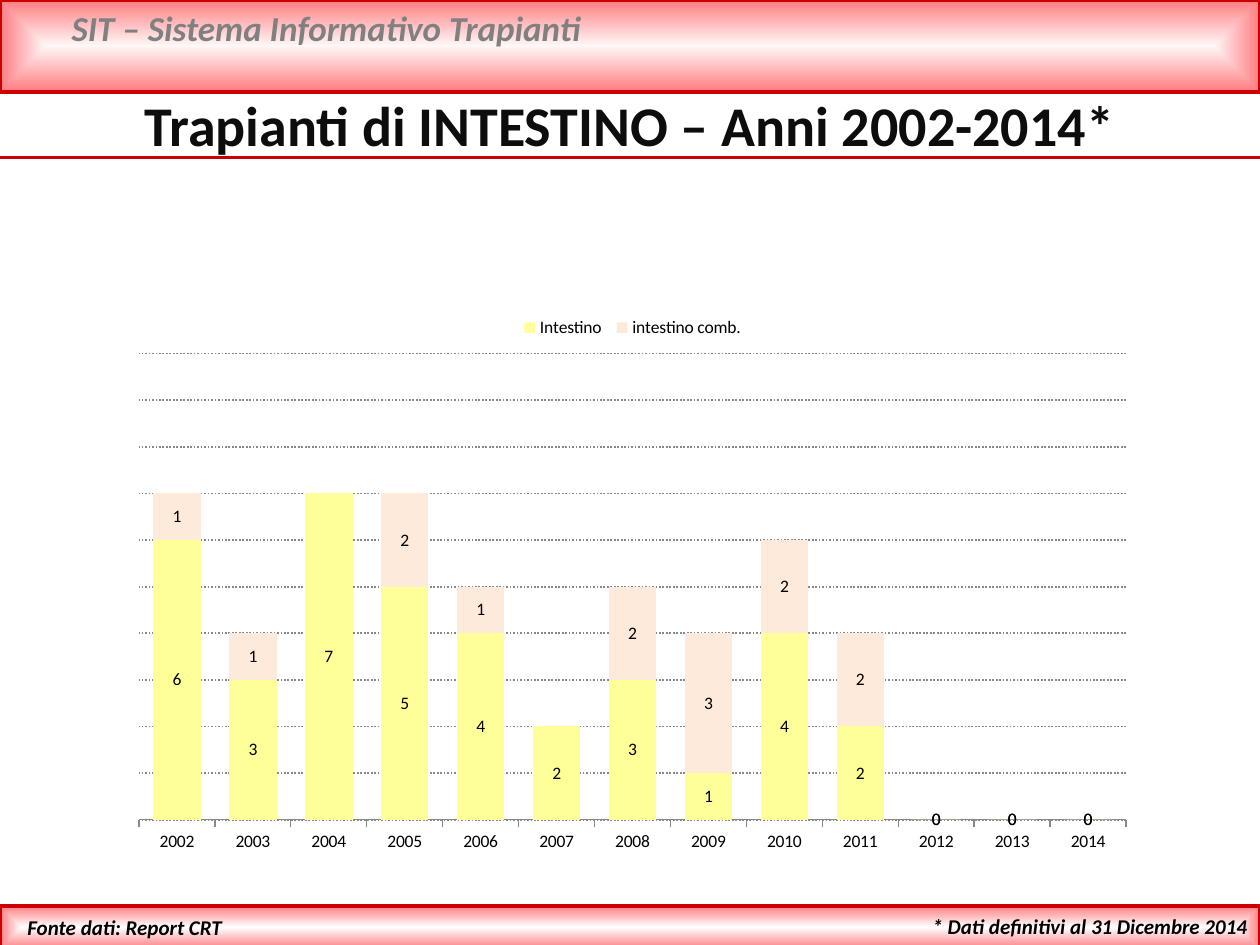
from lxml import etree
from pptx import Presentation
from pptx.chart.data import CategoryChartData
from pptx.dml.color import RGBColor
from pptx.enum.chart import XL_CHART_TYPE, XL_LEGEND_POSITION, XL_TICK_LABEL_POSITION, XL_TICK_MARK
from pptx.enum.dml import MSO_LINE
from pptx.enum.shapes import MSO_CONNECTOR, MSO_SHAPE
from pptx.enum.text import MSO_ANCHOR, PP_ALIGN
from pptx.oxml import parse_xml
from pptx.oxml.ns import nsdecls, qn
from pptx.util import Pt

STACKED = XL_CHART_TYPE.COLUMN_STACKED
LEGEND_TOP = XL_LEGEND_POSITION.TOP
LABELS_LOW = XL_TICK_LABEL_POSITION.LOW
TICK_OUT, TICK_NONE = XL_TICK_MARK.OUTSIDE, XL_TICK_MARK.NONE
DOTTED = MSO_LINE.ROUND_DOT
STRAIGHT = MSO_CONNECTOR.STRAIGHT
RECTANGLE = MSO_SHAPE.RECTANGLE
TOP = MSO_ANCHOR.TOP
LEFT, CENTER, RIGHT = PP_ALIGN.LEFT, PP_ALIGN.CENTER, PP_ALIGN.RIGHT
FONT = "Calibri"
RED = "CC0000"
WIDTH = 720


def color(value):
    return RGBColor.from_string(value)


def write(shape, text, size, font_color, alignment, italic):
    frame = shape.text_frame
    frame.word_wrap = True
    frame.vertical_anchor = TOP
    frame.text = text
    paragraph = frame.paragraphs[0]
    paragraph.alignment = alignment
    font = paragraph.font
    font.name, font.size = FONT, Pt(size)
    font.bold, font.italic = True, italic
    font.color.rgb = color(font_color)


presentation = Presentation()
presentation.slide_width, presentation.slide_height = Pt(WIDTH), Pt(540)
slide = presentation.slides.add_slide(presentation.slide_layouts[5])
shapes = slide.shapes

# Header and footer bands, shaded from a light centre to red edges
for top, height, center_color in [(0, 52.5, "FFF6F6"), (517.7, 24.5, "FFFFFF")]:
    band = shapes.add_shape(RECTANGLE, 0, Pt(top), Pt(WIDTH), Pt(height))
    band.shadow.inherit = False
    band.line.color.rgb = color(RED)
    band.line.width = Pt(2)
    gradient = parse_xml(
        f'<a:gradFill {nsdecls("a")} rotWithShape="1"><a:gsLst>'
        f'<a:gs pos="0"><a:srgbClr val="{center_color}"/></a:gs>'
        '<a:gs pos="100000"><a:srgbClr val="FF7C80"/></a:gs></a:gsLst>'
        '<a:path path="shape"><a:fillToRect l="50000" t="50000" r="50000" b="50000"/>'
        '</a:path></a:gradFill>')
    band.element.spPr.find(qn("a:prstGeom")).addnext(gradient)

# Rule under the title
rule = shapes.add_connector(STRAIGHT, 0, Pt(90), Pt(WIDTH), Pt(90))
rule.line.color.rgb = color(RED)
rule.line.width = Pt(2)
etree.SubElement(rule.element.spPr, qn("a:effectLst"))

# Header and footer texts
band_texts = [
    ("SIT – Sistema Informativo Trapianti", 33.8, 0, 646.6, 31.7, 20, "808080", LEFT),
    ("* Dati definitivi al 31 Dicembre 2014", 422.6, 518.4, 297.4, 21.6, 12, "000000", RIGHT),
    ("Fonte dati: Report CRT", 8.6, 519.1, 231.1, 21.6, 12, "000000", LEFT),
]
for text, left, top, width, height, size, font_color, alignment in band_texts:
    box = shapes.add_textbox(Pt(left), Pt(top), Pt(width), Pt(height))
    write(box, text, size, font_color, alignment, True)

# Title
title = shapes.title
title.left, title.top, title.width, title.height = 0, Pt(48.2), Pt(WIDTH), Pt(46)
write(title, "Trapianti di INTESTINO – Anni 2002-2014*", 32, "0D0D0D", CENTER, False)

# Transplants per year
data = CategoryChartData()
data.categories = [str(year) for year in range(2002, 2015)]
data.add_series("Intestino ", [6, 3, 7, 5, 4, 2, 3, 1, 4, 2, 0, 0, 0])
data.add_series("intestino comb.", [1, 1, None, 2, 1, None, 2, 3, 2, 2, 0, 0, 0])
chart = shapes.add_chart(STACKED, Pt(67.7), Pt(173.5), Pt(587.5), Pt(319.7), data).chart
chart.has_title = False
chart.font.name, chart.font.size = FONT, Pt(10)
chart.font.color.rgb = color("000000")
chart.has_legend = True
chart.legend.position = LEGEND_TOP
chart.legend.include_in_layout = False

plot = chart.plots[0]
plot.gap_width, plot.overlap = 60, 100
plot.vary_by_categories = False
for series, fill_color in zip(plot.series, ["FFFF99", "FDEADA"]):
    series.format.fill.solid()
    series.format.fill.fore_color.rgb = color(fill_color)
    series.data_labels.show_value = True

# Axes
category_axis = chart.category_axis
category_axis.major_tick_mark = TICK_OUT
category_axis.minor_tick_mark = TICK_NONE
category_axis.tick_label_position = LABELS_LOW
category_axis.format.line.color.rgb = color("888888")
value_axis = chart.value_axis
value_axis.visible = False
value_axis.minimum_scale, value_axis.maximum_scale = 0, 10
value_axis.major_unit = 1
value_axis.has_major_gridlines = True
gridline = value_axis.major_gridlines.format.line
gridline.color.rgb = color("888888")
gridline.width = Pt(1)
gridline.dash_style = DOTTED

presentation.save("out.pptx")
